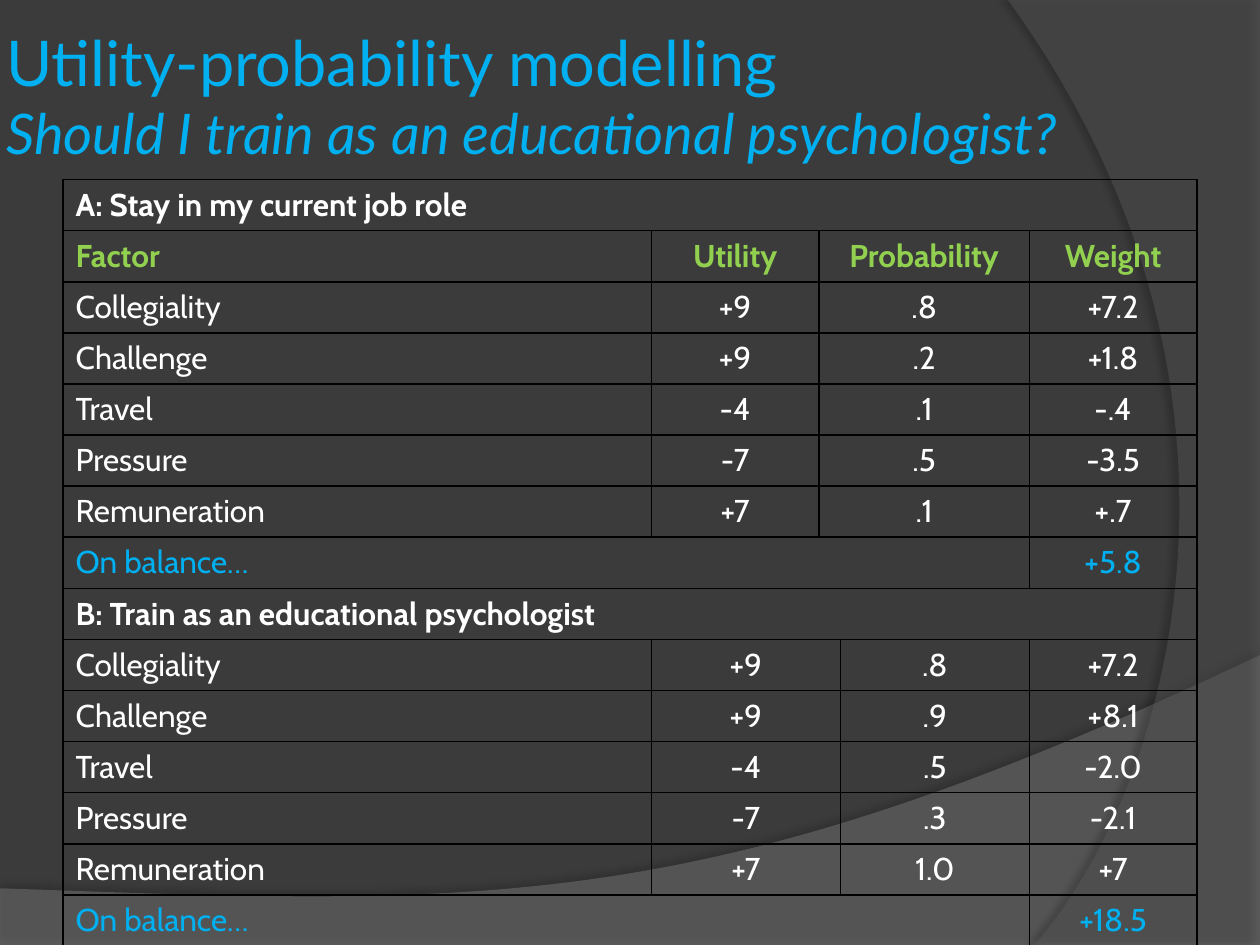
from lxml import etree
from pptx import Presentation, util as u
from pptx.dml.color import RGBColor
from pptx.enum import text
from pptx.oxml import parse_xml
from pptx.oxml.ns import nsdecls, qn

BACKGROUND = RGBColor(0x3B, 0x3B, 0x3B)
WAVE = RGBColor(0x7F, 0x7F, 0x7F)
ARC = RGBColor(0x5E, 0x5E, 0x5E)
BLACK = RGBColor(0, 0, 0)
WHITE = RGBColor(0xFF, 0xFF, 0xFF)
BLUE = RGBColor(0x00, 0xB0, 0xF0)
GREEN = RGBColor(0x92, 0xD0, 0x50)

COLUMNS = [4.67, 1.33, 0.17, 1.5, 1.33]
FACTORS = ["Collegiality", "Challenge", "Travel", "Pressure", "Remuneration"]
UTILITIES = ["+9", "+9", "-4", "-7", "+7"]
STAY = ("A: Stay in my current job role", [".8", ".2", ".1", ".5", ".1"],
        ["+7.2", "+1.8", "-.4", "-3.5", "+.7"], "+5.8")
TRAIN = ("B: Train as an educational psychologist", [".8", ".9", ".5", ".3", "1.0"],
         ["+7.2", "+8.1", "-2.0", "-2.1", "+7"], "+18.5")


def bezier(a, b, c, d, steps=60):
    for i in range(steps + 1):
        t = i / steps
        m = 1 - t
        yield tuple(m**3 * a[k] + 3 * m * m * t * b[k] + 3 * m * t * t * c[k] + t**3 * d[k]
                    for k in (0, 1))


class Deck:
    title_font, table_font, table_size = "Lato", "Cabin", 18

    def __init__(self, width, height):
        self.prs = Presentation()
        self.prs.slide_width, self.prs.slide_height = u.Inches(width), u.Inches(height)
        self.s = self.prs.slides.add_slide(self.prs.slide_layouts[5])
        fill = self.s.background.fill
        fill.solid()
        fill.fore_color.rgb = BACKGROUND

    def x(self, share):
        return round(self.prs.slide_width * share)

    def y(self, share):
        return round(self.prs.slide_height * share)

    def box(self, left, top, width, height):
        return self.x(left), self.y(top), self.x(width), self.y(height)

    def run(self, p, words, font, size, color, bold=False, italic=False):
        r = p.add_run()
        r.text = words
        f = r.font
        f.name, f.size, f.bold, f.italic = font, u.Pt(size), bold, italic
        f.color.rgb = color

    def backdrop(self, points, color, opacity, shade, distance, angle):
        points = [(u.Inches(px), u.Inches(py)) for px, py in points]
        builder = self.s.shapes.build_freeform(*points[0])
        builder.add_line_segments(points[1:], close=True)
        sp = builder.convert_to_shape()
        sp.fill.solid()
        sp.fill.fore_color.rgb = color
        sp.line.fill.background()
        solid = sp.element.spPr.find(qn("a:solidFill"))
        etree.SubElement(solid[0], qn("a:alpha"), val=str(opacity * 1000))
        sp.shadow.inherit = False
        sp.element.spPr.find(qn("a:effectLst")).append(parse_xml(
            f'<a:outerShdw {nsdecls("a")} blurRad="{u.Pt(4)}" dist="{u.Pt(distance)}" '
            f'dir="{angle * 60000}" algn="ctr" rotWithShape="0"><a:srgbClr val="{BLACK}">'
            f'<a:alpha val="{shade * 1000}"/></a:srgbClr></a:outerShdw>'))

    def title(self, box, heading, question):
        sp = self.s.shapes.title
        sp.left, sp.top, sp.width, sp.height = self.box(*box)
        sp.element.getparent().append(sp.element)
        tf = sp.text_frame
        tf.word_wrap, tf.auto_size = True, text.MSO_AUTO_SIZE.NONE
        tf.vertical_anchor = text.MSO_ANCHOR.MIDDLE
        tf.margin_left = tf.margin_right = tf.margin_top = tf.margin_bottom = u.Inches(0.05)
        p = tf.paragraphs[0]
        p.alignment = text.PP_ALIGN.LEFT
        self.run(p, heading, self.title_font, 36, BLUE)
        p.add_line_break()
        self.run(p, question, self.title_font, 32, BLUE, italic=True)

    def border(self, cell):
        cell.fill.background()
        tcPr = cell._tc.get_or_add_tcPr()
        for i, side in enumerate("LRTB"):
            tcPr.insert(i, parse_xml(
                f'<a:ln{side} {nsdecls("a")} w="{u.Pt(1)}"><a:solidFill>'
                f'<a:srgbClr val="{BLACK}"/></a:solidFill></a:ln{side}>'))

    def table(self, box, columns, rows):
        table = self.s.shapes.add_table(len(rows), len(columns), *self.box(*box)).table
        table.first_row = table.horz_banding = False
        for col, width in zip(table.columns, columns):
            col.width = u.Inches(width)
        for row in table.rows:
            row.height = self.y(box[3] / len(rows))
        for cell in table.iter_cells():
            self.border(cell)
        for i, (entries, spans, color, bold) in enumerate(rows):
            j = 0
            for words, span in zip(entries, spans):
                cell = table.cell(i, j)
                if span > 1:
                    cell.merge(table.cell(i, j + span - 1))
                p = cell.text_frame.paragraphs[0]
                p.alignment = text.PP_ALIGN.CENTER if j else text.PP_ALIGN.LEFT
                self.run(p, words, self.table_font, self.table_size, color, bold)
                j += span


def option_rows(option, spans, header=()):
    name, probabilities, weights, balance = option
    factors = zip(FACTORS, UTILITIES, probabilities, weights)
    return [([name], [5], WHITE, True), *header,
            *((entries, spans, WHITE, False) for entries in factors),
            (["On balance…", balance], [4, 1], BLUE, False)]


def main():
    deck = Deck(10, 7.5)
    deck.backdrop([(0, 7.5), (10, 7.5),
                   *bezier((10, 5.2), (5.59, 7.29), (3.91, 7.19), (0, 7.05))],
                  WAVE, 45, 35, 3.5, 270)
    deck.backdrop([(10, 0), (10, 7.5),
                   *bezier((8.21, 7.5), (9.35, 6.19), (10.18, 3), (8, 0))],
                  ARC, 40, 45, 4, 180)
    deck.title((0, 0, 1, 0.2), "Utility-probability modelling",
               "Should I train as an educational psychologist?")
    wide_probability, wide_utility = [1, 1, 2, 1], [1, 2, 1, 1]
    header = (["Factor", "Utility", "Probability", "Weight"], wide_probability, GREEN, True)
    deck.table((0.05, 0.19, 0.9, 0.81), COLUMNS,
               option_rows(STAY, wide_probability, [header])
               + option_rows(TRAIN, wide_utility))
    deck.prs.save("out.pptx")


if __name__ == "__main__":
    main()
